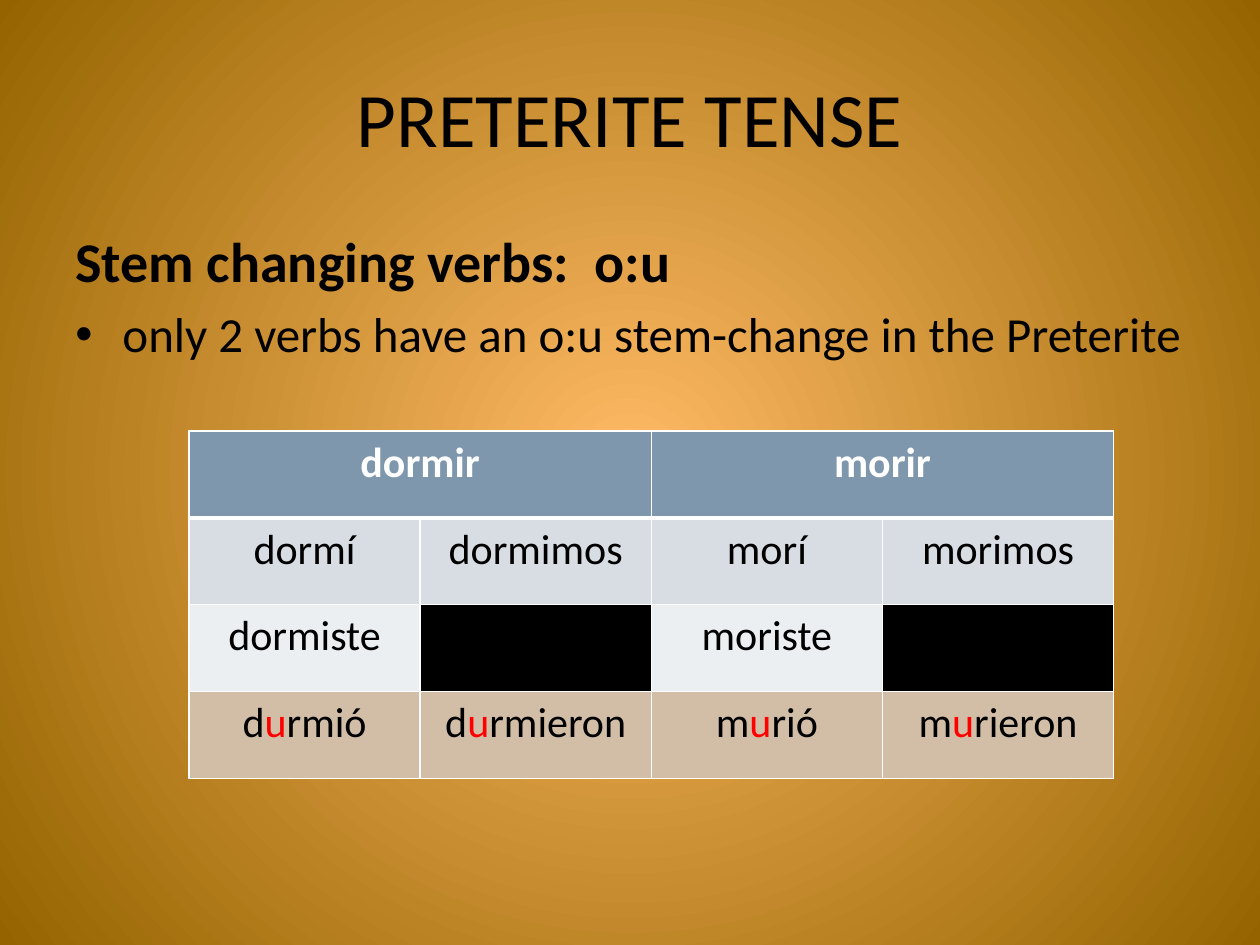
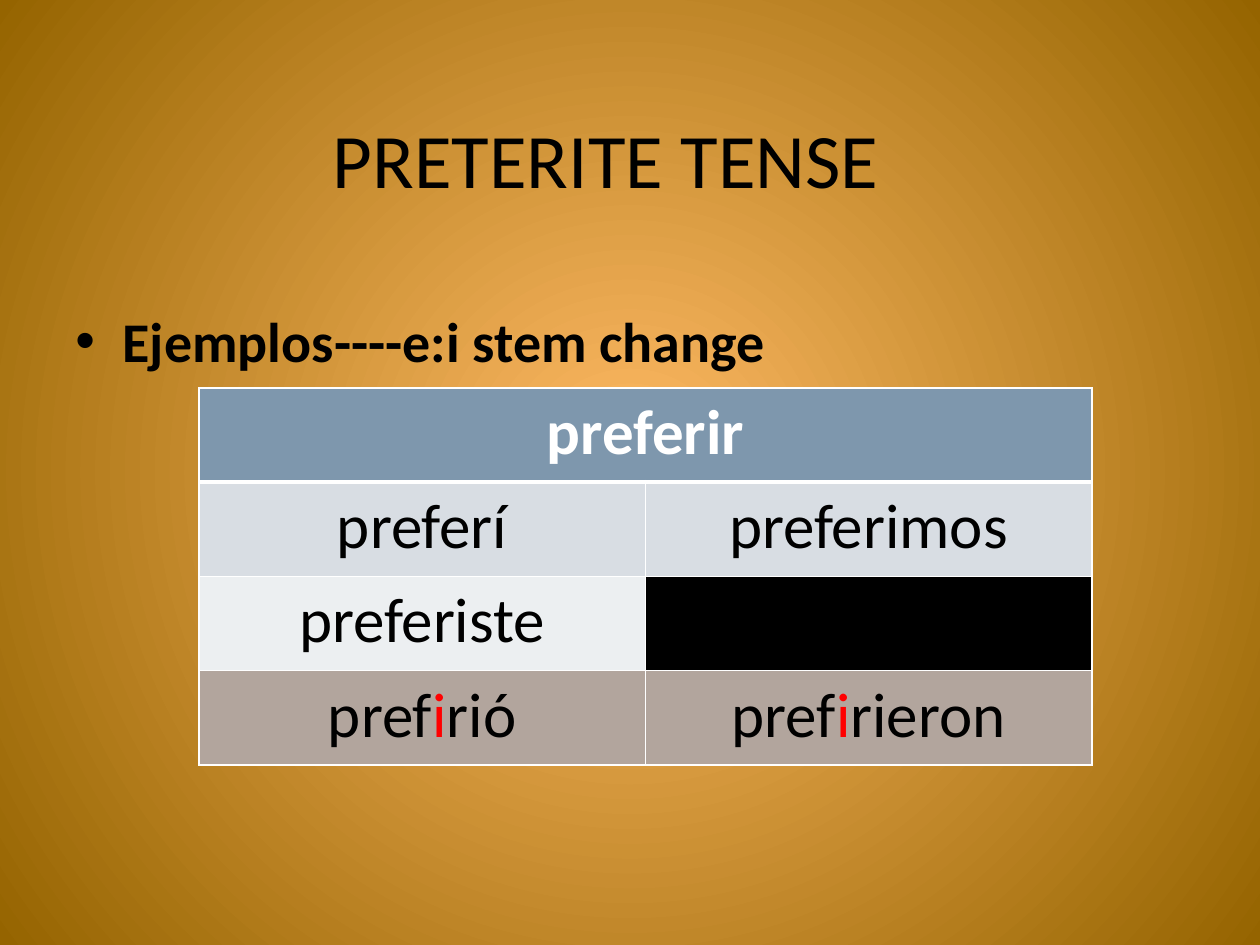
from lxml.etree import SubElement
from pptx import Presentation
from pptx.dml.color import RGBColor
from pptx.enum.text import MSO_ANCHOR, PP_ALIGN
from pptx.oxml.ns import qn
from pptx.util import Cm, Pt

INK, PAPER, CHANGED = "000000", "FFFFFF", "FF0000"
GLOW, EDGE = "FFBA65", "956400"
HEADER, FIRST_PERSON, SECOND_PERSON = "7E97AD", "D8DDE3", "ECEFF1"
BULLET_INDENT = Cm(0.95)


def color(hex_string):
    return RGBColor.from_string(hex_string)


def set_formats(target, formats):
    for name, value in formats.items():
        setattr(target, name, value)


class Lesson:
    """Holds the shared style and the slide being filled."""

    def __init__(self):
        self.deck = Presentation()
        set_formats(self.deck, {"slide_width": Cm(25.4),
                                "slide_height": Cm(19.05)})
        self.slide = None
        self.paint_background()

    def paint_background(self):
        master = self.deck.slide_master
        fill = master.background.fill
        fill.gradient()
        for stop, shade in zip(fill.gradient_stops, (GLOW, EDGE)):
            stop.color.rgb = color(shade)
        # Turn the linear gradient into a centred radial one
        gradient = next(master.element.iter(qn("a:gradFill")))
        gradient.remove(gradient.find(qn("a:lin")))
        radial = SubElement(gradient, qn("a:path"), {"path": "circle"})
        SubElement(radial, qn("a:fillToRect"),
                   {side: "50000" for side in "ltrb"})

    def add_text(self, paragraph, text, size, shade=INK, bold=False):
        """Add text; letters between asterisks are the changed vowel."""
        for index, part in enumerate(text.split("*")):
            run = paragraph.add_run()
            run.text = part
            set_formats(run.font, {"name": "Calibri", "size": Pt(size),
                                   "bold": bold})
            run.font.color.rgb = color(CHANGED if index % 2 else shade)

    def start(self, heading, left, top, width, height):
        self.slide = self.deck.slides.add_slide(self.deck.slide_layouts[5])
        title = self.slide.shapes.title
        set_formats(title, {"left": Cm(left), "top": Cm(top),
                            "width": Cm(width), "height": Cm(height)})
        set_formats(title.text_frame, {"vertical_anchor": MSO_ANCHOR.MIDDLE,
                                       "word_wrap": True})
        paragraph = title.text_frame.paragraphs[0]
        paragraph.alignment = PP_ALIGN.CENTER
        self.add_text(paragraph, heading, 44)

    def explain(self, top, height, lines):
        """Add explanatory lines given as (text, size, bold, bulleted)."""
        body = self.slide.shapes.add_textbox(
            Cm(1.27), Cm(top), Cm(22.86), Cm(height))
        frame = body.text_frame
        frame.word_wrap = True
        for index, (text, size, bold, bulleted) in enumerate(lines):
            paragraph = frame.add_paragraph() if index else frame.paragraphs[0]
            paragraph.space_before = Pt(size * 0.2)
            self.add_text(paragraph, text, size, bold=bold)
            if bulleted:
                properties = paragraph._p.get_or_add_pPr()
                properties.set("marL", str(BULLET_INDENT))
                properties.set("indent", str(-BULLET_INDENT))
                SubElement(properties, qn("a:buFont"), typeface="Arial")
                SubElement(properties, qn("a:buChar"), char="•")

    def border(self, cell, row):
        # The rule below the header is thicker than the others
        widths = {"lnL": 1, "lnR": 1, "lnT": 3 if row == 1 else 1,
                  "lnB": 3 if row == 0 else 1}
        properties = cell._tc.get_or_add_tcPr()
        for side, width in widths.items():
            line = SubElement(properties, qn(f"a:{side}"), w=str(Pt(width)))
            solid = SubElement(line, qn("a:solidFill"))
            SubElement(solid, qn("a:srgbClr"), val=PAPER)

    def conjugation(self, left, top, column, row_height, size, third_person,
                    verbs, forms):
        """Add a table with two columns (singular, plural) per verb."""
        count = 2 * len(verbs)
        header = [text for verb in verbs for text in (verb, "")]
        rows = [header, *forms]
        fills = [HEADER, FIRST_PERSON, SECOND_PERSON, third_person]
        table = self.slide.shapes.add_table(
            len(rows), count, Cm(left), Cm(top),
            Cm(column * count), Cm(row_height * len(rows))).table
        set_formats(table, {"first_row": True, "horz_banding": False})
        for r, (texts, fill) in enumerate(zip(rows, fills)):
            for c, text in enumerate(texts):
                cell = table.cell(r, c)
                self.border(cell, r)
                cell.fill.solid()
                cell.fill.fore_color.rgb = color(fill if text or r == 0 else INK)
                if text:
                    paragraph = cell.text_frame.paragraphs[0]
                    paragraph.alignment = PP_ALIGN.CENTER
                    self.add_text(paragraph, text, size,
                                  INK if r else PAPER, bold=r == 0)
        for c in range(0, count, 2):
            table.cell(0, c).merge(table.cell(0, c + 1))


def main():
    lesson = Lesson()

    # Verbs with the o:u change
    lesson.start("PRETERITE TENSE", 1.27, 0.76, 22.86, 3.18)
    lesson.explain(4.45, 12.57, [
        ("Stem changing verbs:  o:u", 32, True, False),
        ("only 2 verbs have an o:u stem-change in the Preterite",
         28, False, True),
    ])
    lesson.conjugation(3.81, 8.69, 4.66, 1.75, 24, "D2BEA7",
                       ["dormir", "morir"], [
        ["dormí", "dormimos", "morí", "morimos"],
        ["dormiste", "", "moriste", ""],
        ["d*u*rmió", "d*u*rmieron", "m*u*rió", "m*u*rieron"],
    ])

    # Example of the e:i change
    lesson.start("PRETERITE TENSE", 1.7, 2.11, 21.03, 2.13)
    lesson.explain(6.05, 10.97,
                   [("Ejemplos----e:i stem change", 32, True, True)])
    lesson.conjugation(4.01, 7.82, 9, 1.9, 36, "B2A59D", ["preferir"], [
        ["preferí", "preferimos"],
        ["preferiste", ""],
        ["pref*i*rió", "pref*i*rieron"],
    ])

    lesson.deck.save("out.pptx")


if __name__ == "__main__":
    main()
